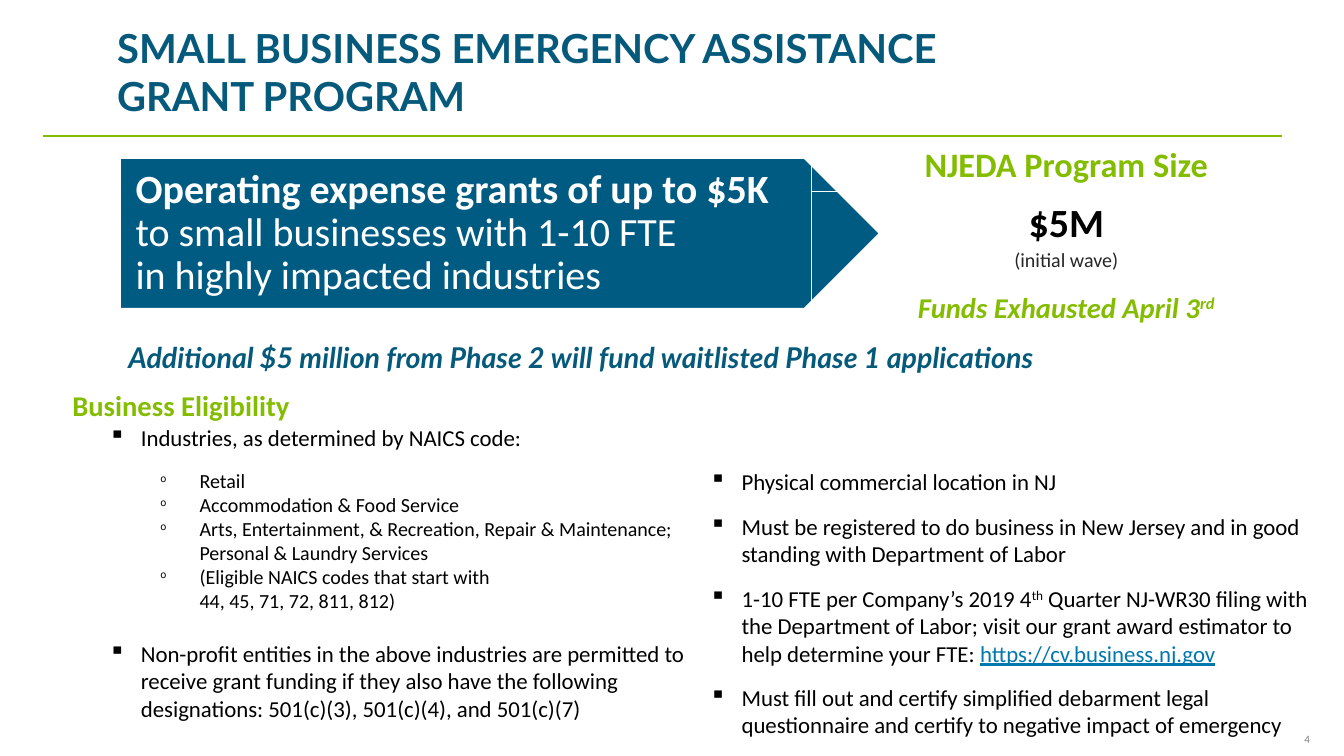
from lxml import etree
from pptx import Presentation
from pptx import util as u
from pptx.dml.color import RGBColor
from pptx.enum import shapes, text
from pptx.oxml import ns

COLOURS = {
    "navy": "05597B", "banner": "005B82", "green": "84BD00", "link": "0078AE",
    "black": "000000", "dark": "262626", "grey": "808080", "white": "FFFFFF",
}
LEFT, CENTRE, RIGHT = text.PP_ALIGN.LEFT, text.PP_ALIGN.CENTER, text.PP_ALIGN.RIGHT
SUP, LINK, PLAIN = "superscript", "link", "plain"

INDUSTRIES = [
    "Retail",
    "Accommodation & Food Service",
    "Arts, Entertainment, & Recreation, Repair & Maintenance; Personal & Laundry Services",
    "(Eligible NAICS codes that start with\n44, 45, 71, 72, 811, 812)",
]
NON_PROFITS = (
    "Non-profit entities in the above industries are permitted to receive grant funding "
    "if they also have the following designations: 501(c)(3), 501(c)(4), and 501(c)(7)"
)
REQUIREMENTS = [
    ["Physical commercial location in NJ"],
    ["Must be registered to do business in New Jersey and in good standing with "
     "Department of Labor"],
    ["1-10 FTE per Company’s 2019 4", ("th", SUP),
     " Quarter NJ-WR30 filing with the Department of Labor; visit our grant award "
     "estimator to help determine your FTE: ", ("https://cv.business.nj.gov", LINK)],
    ["Must fill out and certify simplified debarment legal questionnaire and certify to "
     "negative impact of emergency"],
]


def rgb(name):
    return RGBColor.from_string(COLOURS[name])


def add_span(para, words, style=None):
    for number, line in enumerate(words.split("\n")):
        if number:
            para.add_line_break()
        if not line:
            continue
        span = para.add_run()
        span.text = line
        if style == SUP:
            span._r.get_or_add_rPr().set("baseline", "30000")
        elif style == LINK:
            span.font.color.rgb = rgb("link")
            span.font.underline = True
        elif style == PLAIN:
            span.font.bold = False


def write(para, spans, size, colour, align=LEFT, font="Calibri", bold=False, italic=False):
    """Fill a paragraph from strings and (string, style) pairs."""
    for item in spans:
        add_span(para, *((item,) if isinstance(item, str) else item))
    para.alignment = align
    para.font.name = font
    para.font.size = u.Pt(size)
    para.font.bold = bold
    para.font.italic = italic
    para.font.color.rgb = rgb(colour)


def next_para(frame):
    first = frame.paragraphs[0]
    return frame.add_paragraph() if first.runs else first


def add_box(page, left, top, width, height):
    box = page.shapes.add_textbox(u.Cm(left), u.Cm(top), u.Cm(width), u.Cm(height))
    box.text_frame.word_wrap = True
    return box.text_frame


def add_bullet(frame, spans, sub=False, before=0, after=0):
    para = next_para(frame)
    margin, hang, percent, mark = (2.24, 0.97, 50, "o") if sub else (0.79, 0.79, 100, "▪")
    props = para._p.get_or_add_pPr()
    props.set("marL", str(u.Cm(margin)))
    props.set("indent", str(-u.Cm(hang)))
    etree.SubElement(props, ns.qn("a:buSzPct")).set("val", str(percent * 1000))
    etree.SubElement(props, ns.qn("a:buChar")).set("char", mark)
    if sub:
        para.level = 1
    if before:
        para.space_before = u.Pt(before)
    para.space_after = u.Pt(after)
    write(para, spans, 14 if sub else 16, "black")


def add_title(page, words):
    title = page.shapes.title
    title.left, title.top, title.width, title.height = map(u.Cm, (2.64, 0.46, 23.01, 2.64))
    frame = title.text_frame
    frame.word_wrap = True
    frame.auto_size = text.MSO_AUTO_SIZE.NONE
    frame.vertical_anchor = text.MSO_ANCHOR.TOP
    write(frame.paragraphs[0], [words], 28, "navy", font="Lato", bold=True)


def add_rule(page, left, right, top):
    rule = page.shapes.add_connector(
        shapes.MSO_CONNECTOR.STRAIGHT, u.Cm(left), u.Cm(top), u.Cm(right), u.Cm(top))
    rule.line.color.rgb = rgb("green")
    rule.line.width = u.Pt(1.5)
    etree.SubElement(rule._element.spPr, ns.qn("a:effectLst"))


def add_banner(page, spans):
    banner = page.shapes.add_shape(
        shapes.MSO_SHAPE.PENTAGON, u.Cm(2.95), u.Cm(3.89), u.Cm(18.8), u.Cm(3.75))
    banner.shadow.inherit = False
    banner.fill.solid()
    banner.fill.fore_color.rgb = rgb("banner")
    banner.line.color.rgb = rgb("white")
    banner.line.width = u.Pt(2)
    frame = banner.text_frame
    frame.vertical_anchor = text.MSO_ANCHOR.MIDDLE
    frame.margin_left, frame.margin_right = u.Cm(0.4), u.Cm(0.1)
    para = frame.paragraphs[0]
    para.line_spacing = 0.9
    write(para, spans, 28, "white", bold=True)


def add_program_size(page):
    table = page.shapes.add_table(2, 1, u.Cm(20.04), u.Cm(3.45), u.Cm(12.6), u.Cm(4.77)).table
    table.first_row = table.horz_banding = False
    for row, height in zip(table.rows, (1.27, 3.5)):
        row.height = u.Cm(height)
        row.cells[0].fill.background()
        row.cells[0].vertical_anchor = text.MSO_ANCHOR.MIDDLE

    write(table.cell(0, 0).text_frame.paragraphs[0], ["NJEDA Program Size"],
          24, "green", CENTRE, bold=True)
    frame = table.cell(1, 0).text_frame
    write(next_para(frame), ["$5M"], 28, "black", CENTRE, bold=True)
    write(next_para(frame), ["(initial wave)"], 14, "dark", CENTRE)
    funds = next_para(frame)
    funds.space_before = u.Pt(13)
    write(funds, ["Funds Exhausted April 3", ("rd", SUP)], 20, "green", CENTRE,
          bold=True, italic=True)


def main():
    deck = Presentation()
    deck.slide_width, deck.slide_height = u.Cm(33.2), u.Cm(18.67)
    page = deck.slides.add_slide(deck.slide_layouts[5])

    # Heading
    add_title(page, "SMALL BUSINESS EMERGENCY ASSISTANCE GRANT PROGRAM")
    add_rule(page, 1.07, 31.67, 3.35)

    # Grant offer and program size
    add_banner(page, ["Operating expense grants of up to $5K\n",
                      ("to small businesses with 1-10 FTE\nin highly impacted industries", PLAIN)])
    add_program_size(page)
    phase = add_box(page, 2.92, 8.26, 29.21, 1.12)
    write(phase.paragraphs[0],
          ["Additional $5 million from Phase 2 will fund waitlisted Phase 1 applications"],
          20, "navy", font="Lato", bold=True, italic=True)

    # Eligibility in two columns
    heading = add_box(page, 1.07, 9.04, 6.81, 1.4).paragraphs[0]
    heading.line_spacing = 1.5
    write(heading, ["Business Eligibility"], 20, "green", CENTRE, bold=True)

    entities = add_box(page, 2.44, 10.34, 15.35, 8)
    add_bullet(entities, ["Industries, as determined by NAICS code:"], after=12)
    for industry in INDUSTRIES:
        add_bullet(entities, [industry], sub=True)
    add_bullet(entities, [NON_PROFITS], before=19)

    requirements = add_box(page, 17.28, 11.43, 15.36, 7)
    for spans in REQUIREMENTS:
        add_bullet(requirements, spans, after=12)

    # Page number
    number = add_box(page, 32.03, 18.08, 0.33, 0.33)
    number.margin_left = number.margin_right = number.margin_top = number.margin_bottom = 0
    number.vertical_anchor = text.MSO_ANCHOR.MIDDLE
    write(number.paragraphs[0], ["4"], 7.8, "grey", RIGHT)

    deck.save("out.pptx")


if __name__ == "__main__":
    main()
